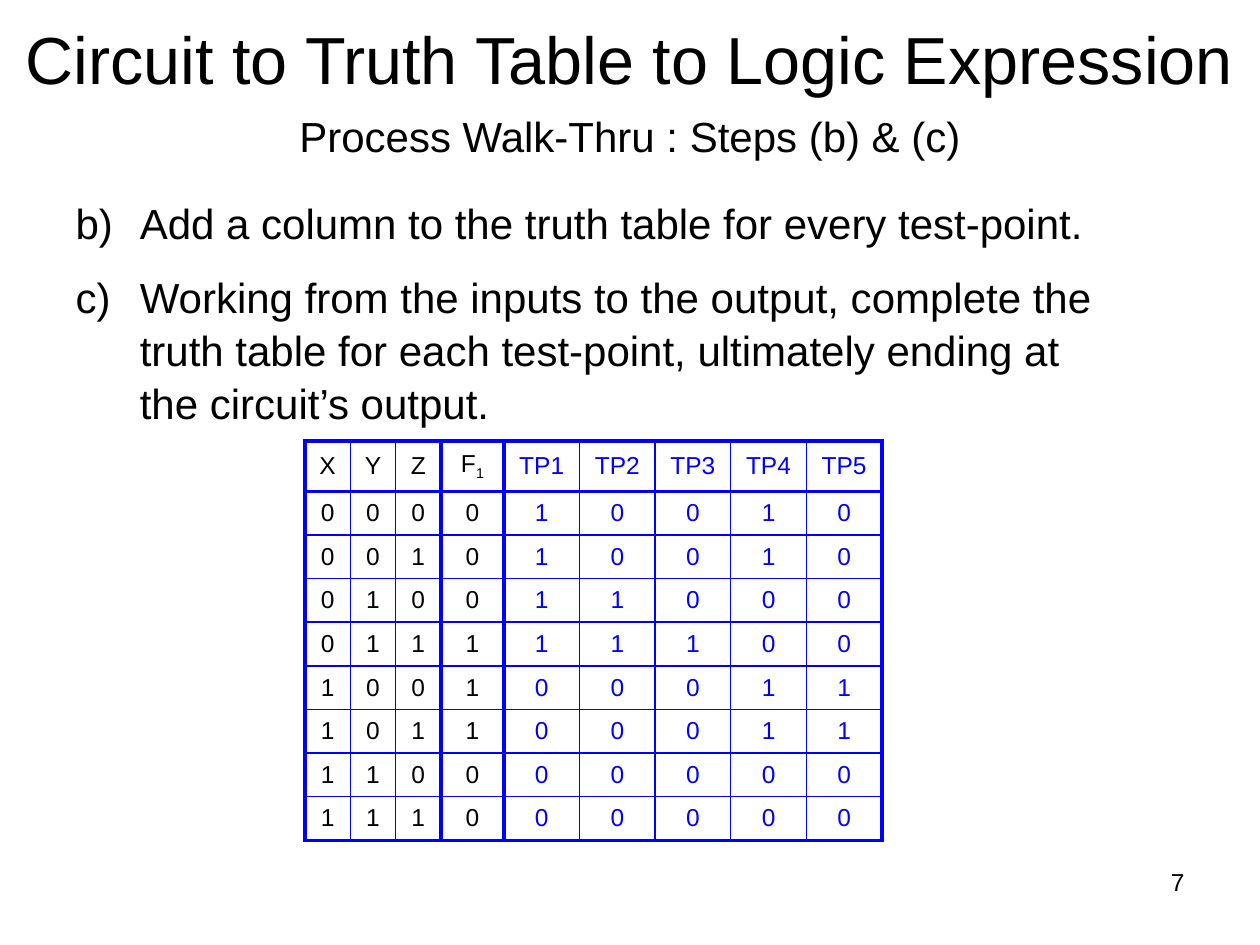
"""Build the truth table slide with its title, list of steps and test-point table."""
from lxml import etree
from pptx import Presentation
from pptx.dml.color import RGBColor
from pptx.enum.text import MSO_ANCHOR, MSO_AUTO_SIZE, PP_ALIGN
from pptx.oxml.ns import qn
from pptx.util import Inches, Pt

BLACK = RGBColor(0x00, 0x00, 0x00)
BLUE = RGBColor(0x00, 0x00, 0xFF)
WHITE = RGBColor(0xFF, 0xFF, 0xFF)
CENTER, LEFT, RIGHT = PP_ALIGN.CENTER, PP_ALIGN.LEFT, PP_ALIGN.RIGHT
MIDDLE, TOP = MSO_ANCHOR.MIDDLE, MSO_ANCHOR.TOP
NO_AUTOFIT = MSO_AUTO_SIZE.NONE
THICK, THIN = Pt(2.25), Pt(1)

presentation = Presentation()
presentation.slide_width, presentation.slide_height = Inches(10), Inches(7.5)
unit = presentation.slide_width // 100
slide = presentation.slides.add_slide(presentation.slide_layouts[1])
shapes = slide.shapes


def grid(*cells):
    return [round(cell * unit) for cell in cells]


def write(paragraph, text, size, color=BLACK, alignment=CENTER):
    paragraph.alignment = alignment
    run = paragraph.add_run()
    run.text = text
    run.font.name = "Arial"
    run.font.size = Pt(size)
    run.font.bold = False
    run.font.color.rgb = color
    return run


steps = slide.placeholders[1]
steps.left, steps.top, steps.width, steps.height = grid(5, 15, 84.2, 29.3)
steps.text_frame.auto_size = NO_AUTOFIT
steps.text_frame.vertical_anchor = TOP
step_texts = [
    ("Add a column to the truth table for every test-point.", 12),
    ("Working from the inputs to the output, complete the truth table for each "
     "test-point, ultimately ending at the circuit’s output.", 6),
]
for index, (text, space_after) in enumerate(step_texts):
    paragraph = steps.text_frame.paragraphs[0] if index == 0 else steps.text_frame.add_paragraph()
    paragraph.line_spacing = 1.05
    paragraph.space_before = Pt(0)
    paragraph.space_after = Pt(space_after)
    properties = paragraph._p.get_or_add_pPr()
    properties.set("marL", str(Inches(0.51)))
    properties.set("indent", str(-Inches(0.51)))
    etree.SubElement(properties, qn("a:buFont"), typeface="Arial")
    etree.SubElement(properties, qn("a:buAutoNum"), type="alphaLcParenR", startAt="2")
    write(paragraph, text, 24, alignment=LEFT)

subtitle = shapes.add_textbox(*grid(22.5, 8.3, 55, 5.1))
subtitle.text_frame.word_wrap = False
write(subtitle.text_frame.paragraphs[0], "Process Walk-Thru : Steps (b) & (c)", 24)

header = ["X", "Y", "Z", "F", "TP1", "TP2", "TP3", "TP4", "TP5"]
truth_rows = ["000010010", "001010010", "010011000", "011111100", "100100011",
              "101100011", "110000000", "111000000"]
table_rows = [header] + [list(row) for row in truth_rows]
column_widths = [3.6] * 3 + [5] + [6] * 5
header_height, table_height = 4, 31.7
row_heights = [header_height] + [(table_height - header_height) / len(truth_rows)] * len(truth_rows)
thick_columns, thick_rows = {0, 3, 4, 9}, {0, 1, 9}

frame = shapes.add_table(len(table_rows), len(header),
                         *grid(24.2, 35, sum(column_widths), table_height))
table = frame.table
table.first_row = table.horz_banding = False
for column, width in zip(table.columns, grid(*column_widths)):
    column.width = width
for row, height in zip(table.rows, grid(*row_heights)):
    row.height = height

for row_index, values in enumerate(table_rows):
    for column_index, value in enumerate(values):
        cell = table.cell(row_index, column_index)
        cell.vertical_anchor = MIDDLE
        paragraph = cell.text_frame.paragraphs[0]
        write(paragraph, value, 14, BLUE if column_index > 3 else BLACK)
        if value == "F":
            subscript = write(paragraph, "1", 14)
            subscript._r.get_or_add_rPr().set("baseline", "-25000")
        properties = cell._tc.get_or_add_tcPr()
        edges = {
            "a:lnL": column_index in thick_columns,
            "a:lnR": column_index + 1 in thick_columns,
            "a:lnT": row_index in thick_rows,
            "a:lnB": row_index + 1 in thick_rows,
        }
        for tag, is_thick in edges.items():
            line = etree.SubElement(properties, qn(tag), w=str(THICK if is_thick else THIN))
            fill = etree.SubElement(line, qn("a:solidFill"))
            etree.SubElement(fill, qn("a:srgbClr"), val=str(BLUE))
        cell.fill.solid()
        cell.fill.fore_color.rgb = WHITE

page_number = shapes.add_textbox(*grid(71.7, 68.3, 23.3, 5.2))
page_number.text_frame.word_wrap = True
write(page_number.text_frame.paragraphs[0], "7", 14, alignment=RIGHT)

title = shapes.title
title.left, title.top, title.width, title.height = grid(0, 0, 100, 9.2)
title.text_frame.auto_size = NO_AUTOFIT
title.text_frame.vertical_anchor = MIDDLE
write(title.text_frame.paragraphs[0], "Circuit to Truth Table to Logic Expression", 38)
title.element.getparent().append(title.element)

presentation.save("out.pptx")
